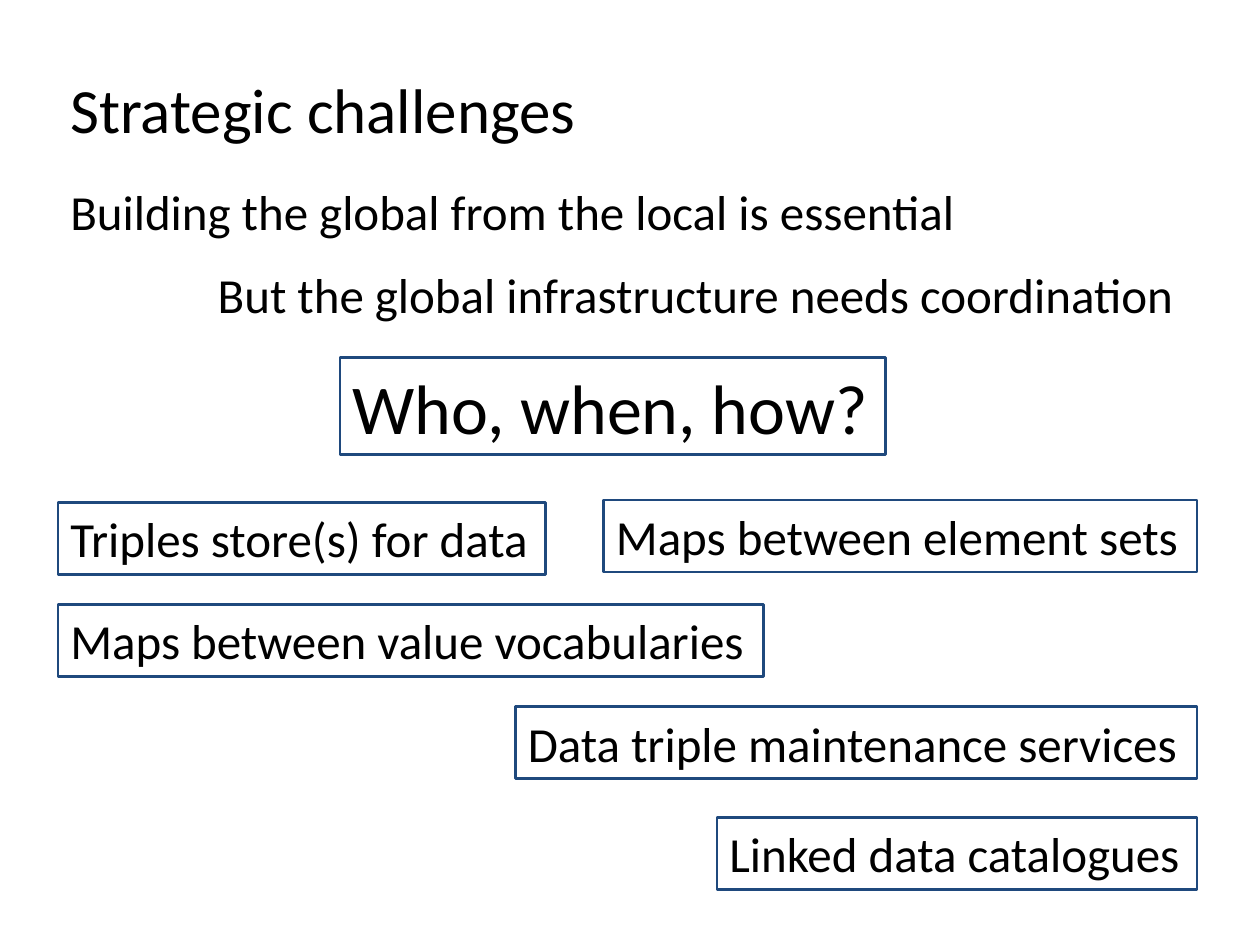
from dataclasses import dataclass

from pptx import Presentation
from pptx.dml.color import RGBColor
from pptx.enum.text import MSO_AUTO_SIZE, PP_ALIGN
from pptx.util import Inches, Pt

FIT_SHAPE = MSO_AUTO_SIZE.SHAPE_TO_FIT_TEXT
ALIGN_LEFT = PP_ALIGN.LEFT

# The slide is a grid of 100 columns by 75 rows
COLUMNS, ROWS = 100, 75
CELL = Inches(0.1)
LEFT_EDGE, RIGHT_EDGE = 4.6, 95


@dataclass(frozen=True)
class Theme:
    font: str = "Calibri"
    ink: RGBColor = RGBColor(0x00, 0x00, 0x00)
    frame: RGBColor = RGBColor(0x1F, 0x49, 0x7D)
    frame_width: float = 1.5
    title: int = 36
    body: int = 28
    question: int = 40


THEME = Theme()
HEIGHTS = {THEME.title: 7.1, THEME.body: 5.7, THEME.question: 7.7}  # rows


@dataclass(frozen=True)
class Statement:
    text: str
    left: float
    top: float
    width: float
    size: int = THEME.body
    framed: bool = False


def from_left(text: str, top: float, width: float, **style) -> Statement:
    return Statement(text, LEFT_EDGE, top, width, **style)


def to_right(text: str, top: float, width: float, **style) -> Statement:
    return Statement(text, RIGHT_EDGE - width, top, width, **style)


STATEMENTS = (
    # Heading and the two opposing points
    from_left("Strategic challenges", 5.1, 42.5, size=THEME.title),
    from_left("Building the global from the local is essential", 13.9, 73.4),
    to_right("But the global infrastructure needs coordination", 20.5, 78.7),
    # Framed challenges
    from_left("Triples store(s) for data", 39.9, 38.7, framed=True),
    to_right("Maps between element sets", 39.7, 47.1, framed=True),
    from_left("Maps between value vocabularies", 48, 56, framed=True),
    to_right("Data triple maintenance services", 56.1, 54.1, framed=True),
    to_right("Linked data catalogues", 64.9, 38.1, framed=True),
    # Central question
    Statement("Who, when, how?", 27, 28.4, 43.3, THEME.question, framed=True),
)


def cells(count: float) -> int:
    return round(count * CELL)


def draw_statement(slide, statement: Statement) -> None:
    box = slide.shapes.add_textbox(
        cells(statement.left), cells(statement.top),
        cells(statement.width), cells(HEIGHTS[statement.size]))
    if statement.framed:
        box.line.color.rgb = THEME.frame
        box.line.width = Pt(THEME.frame_width)

    frame = box.text_frame
    frame.word_wrap = False
    frame.auto_size = FIT_SHAPE
    paragraph = frame.paragraphs[0]
    paragraph.text = statement.text
    paragraph.alignment = ALIGN_LEFT
    paragraph.font.name = THEME.font
    paragraph.font.size = Pt(statement.size)
    paragraph.font.color.rgb = THEME.ink


def main() -> None:
    deck = Presentation()
    deck.slide_width, deck.slide_height = cells(COLUMNS), cells(ROWS)
    slide = deck.slides.add_slide(deck.slide_layouts[6])
    for statement in STATEMENTS:
        draw_statement(slide, statement)
    deck.save("out.pptx")


if __name__ == "__main__":
    main()
